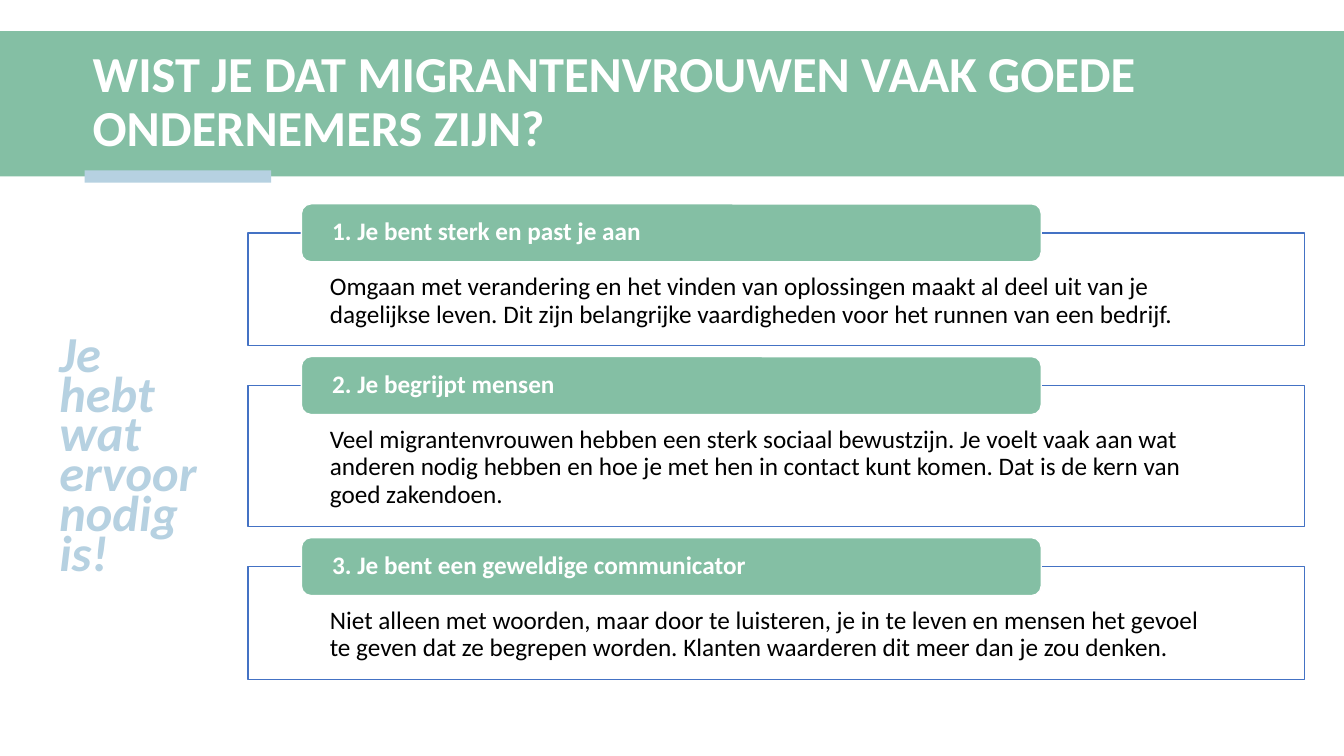
from dataclasses import dataclass

from lxml import etree
from pptx import Presentation
from pptx.dml.color import RGBColor
from pptx.enum import shapes, text
from pptx.oxml import ns
from pptx.util import Pt


@dataclass(frozen=True)
class Theme:
    font: str = "Calibri"
    green: RGBColor = RGBColor(0x84, 0xBF, 0xA4)
    pale_blue: RGBColor = RGBColor(0xB6, 0xD1, 0xE1)
    blue: RGBColor = RGBColor(0x44, 0x72, 0xC4)
    white: RGBColor = RGBColor(0xFF, 0xFF, 0xFF)
    black: RGBColor = RGBColor(0, 0, 0)
    display: int = 36
    body: int = 18


THEME = Theme()
CARD_LEFT, CARD_WIDTH, CARD_TOP, CARD_GAP = 177.1, 754.6, 166.3, 28.5
HEADER_INDENT, HEADER_WIDTH, HEADER_HEIGHT = 38.2, 528.5, 41.4
CARDS = [
    ("1. Je bent sterk en past je aan", 80.6,
     "Omgaan met verandering en het vinden van oplossingen maakt al deel uit van je "
     "dagelijkse leven. Dit zijn belangrijke vaardigheden voor het runnen van een bedrijf."),
    ("2. Je begrijpt mensen", 100.8,
     "Veel migrantenvrouwen hebben een sterk sociaal bewustzijn. Je voelt vaak aan wat "
     "anderen nodig hebben en hoe je met hen in contact kunt komen. Dat is de kern van "
     "goed zakendoen."),
    ("3. Je bent een geweldige communicator", 80.6,
     "Niet alleen met woorden, maar door te luisteren, je in te leven en mensen het gevoel "
     "te geven dat ze begrepen worden. Klanten waarderen dit meer dan je zou denken."),
]


def add_box(s, kind, box, fill, line=None, opacity=None):
    sp = s.shapes.add_shape(kind, *map(Pt, box))
    sp.shadow.inherit = False
    sp.fill.solid()
    sp.fill.fore_color.rgb = fill
    if line is None:
        sp.line.fill.background()
    else:
        sp.line.color.rgb = line
        sp.line.width = Pt(1)
    if opacity is not None:
        color = sp.element.spPr.find(ns.qn("a:solidFill"))[0]
        etree.SubElement(color, ns.qn("a:alpha")).set("val", str(opacity * 1000))
    return sp


def write(sp, words, size, color, bold=False, italic=False, spacing=0.9,
          anchor=text.MSO_ANCHOR.MIDDLE, insets=(7.2, 3.6, 7.2, 3.6)):
    tf = sp.text_frame
    tf.word_wrap = True
    tf.auto_size = text.MSO_AUTO_SIZE.NONE
    tf.vertical_anchor = anchor
    tf.margin_left, tf.margin_top, tf.margin_right, tf.margin_bottom = map(Pt, insets)
    p = tf.paragraphs[0]
    p.text = words
    p.alignment = text.PP_ALIGN.LEFT
    p.line_spacing = spacing
    p.font.name = THEME.font
    p.font.size = Pt(size)
    p.font.bold = bold
    p.font.italic = italic
    p.font.color.rgb = color


def add_title(s, words):
    rect = shapes.MSO_SHAPE.RECTANGLE
    add_box(s, rect, (0, 22.3, 960, 103.7), THEME.green)
    accent = add_box(s, rect, (60.5, 121.7, 133.2, 8.9), THEME.pale_blue)
    sp = s.shapes.title
    accent.element.addnext(sp.element)
    sp.left, sp.top, sp.width, sp.height = map(Pt, (59, 29.5, 883.4, 88.6))
    write(sp, words, THEME.display, THEME.white, bold=True)


def add_motto(s, words):
    sp = s.shapes.add_textbox(*map(Pt, (35.3, 241.2, 116.6, 148.3)))
    write(sp, words, THEME.display, THEME.pale_blue, bold=True, italic=True,
          spacing=Pt(28.4), anchor=text.MSO_ANCHOR.TOP)


def add_card(s, top, height, heading, words):
    sp = add_box(s, shapes.MSO_SHAPE.RECTANGLE, (CARD_LEFT, top, CARD_WIDTH, height),
                 THEME.white, THEME.blue, opacity=90)
    write(sp, words, THEME.body, THEME.black, anchor=text.MSO_ANCHOR.TOP,
          insets=(58.5, 29.5, 58.5, 10))
    header = (CARD_LEFT + HEADER_INDENT, top - HEADER_HEIGHT / 2, HEADER_WIDTH, HEADER_HEIGHT)
    sp = add_box(s, shapes.MSO_SHAPE.ROUNDED_RECTANGLE, header, THEME.green, THEME.white)
    write(sp, heading, THEME.body, THEME.white, bold=True, insets=(20, 0, 20, 0))


def main():
    prs = Presentation()
    prs.slide_width, prs.slide_height = Pt(960), Pt(540)
    s = prs.slides.add_slide(prs.slide_layouts.get_by_name("Title Only"))
    add_title(s, "WIST JE DAT MIGRANTENVROUWEN VAAK GOEDE ONDERNEMERS ZIJN?")
    add_motto(s, "Je hebt wat ervoor nodig is!")
    top = CARD_TOP
    for heading, height, words in CARDS:
        add_card(s, top, height, heading, words)
        top += height + CARD_GAP
    prs.save("out.pptx")


if __name__ == "__main__":
    main()
